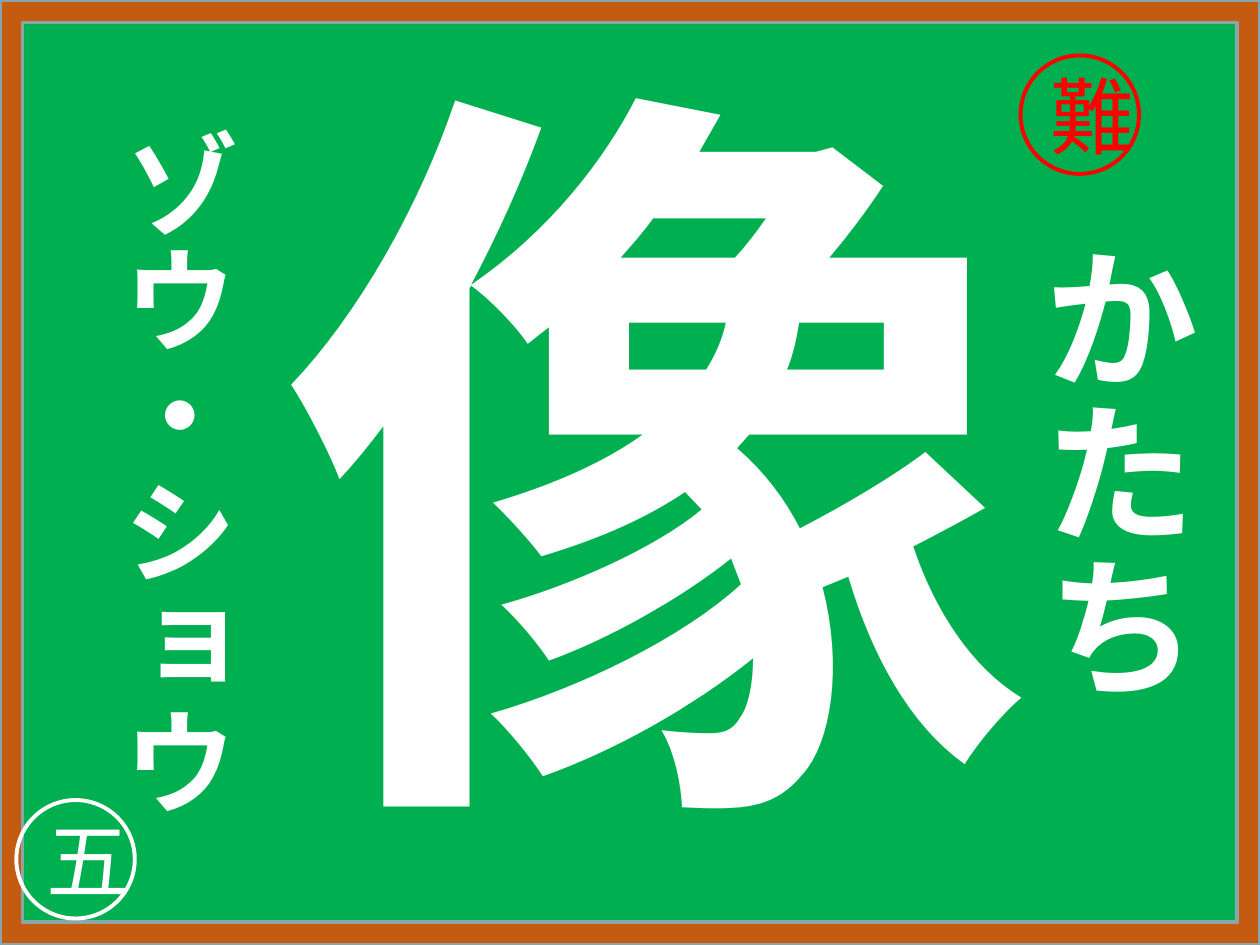
from lxml import etree
from pptx import Presentation
from pptx.dml.color import RGBColor
from pptx.enum.shapes import MSO_SHAPE as Shape
from pptx.enum.text import MSO_ANCHOR as Anchor, MSO_AUTO_SIZE as AutoSize, PP_ALIGN as Align
from pptx.oxml.ns import qn
from pptx.util import Inches, Pt

FONT = "Noto Sans CJK JP"
GREEN = RGBColor(0x00, 0xB0, 0x50)
BROWN = RGBColor(0xC5, 0x5A, 0x11)
GREY = RGBColor(0x8A, 0xA6, 0xA8)
WHITE = RGBColor(0xFF, 0xFF, 0xFF)
RED = RGBColor(0xFF, 0x00, 0x00)


def write(frame, text, size, color, bold=False):
    """Add one centred run, with the font set for Japanese text too."""
    paragraph = frame.paragraphs[0]
    paragraph.alignment = Align.CENTER
    run = paragraph.add_run()
    run.text = text
    run.font.name = FONT
    run.font.size = Pt(size)
    run.font.bold = bold
    run.font.color.rgb = color
    east_asian = etree.SubElement(run.font._element, qn("a:ea"))
    east_asian.set("typeface", FONT)


def set_vertical(shape):
    shape.element.txBody.bodyPr.set("vert", "eaVert")


prs = Presentation()
prs.slide_width = Inches(10)
prs.slide_height = Inches(7.5)
slide = prs.slides.add_slide(prs.slide_layouts[5])
slide.background.fill.solid()
slide.background.fill.fore_color.rgb = GREEN

# Blackboard border, behind everything else
border = slide.shapes.add_shape(Shape.FRAME, 0, 0, prs.slide_width, prs.slide_height)
border.adjustments[0] = 0.024
border.shadow.inherit = False
border.fill.solid()
border.fill.fore_color.rgb = BROWN
border.line.color.rgb = GREY
border.line.width = Pt(2)
slide.shapes.element.insert(2, border.element)

# The kanji
kanji = slide.shapes.title
kanji.left, kanji.top = Inches(1.81), Inches(0.55)
kanji.width, kanji.height = Inches(6.38), Inches(6.27)
kanji.text_frame.vertical_anchor = Anchor.MIDDLE
kanji.text_frame.auto_size = AutoSize.NONE
set_vertical(kanji)
write(kanji.text_frame, "像", 432, WHITE, bold=True)

# Kun reading on the right, on readings on the left
readings = [
    ("かたち", 88, 7.96, 1.82, 1.68, 3.74),
    ("ゾウ・ショウ", 66, 0.69, 0.91, 1.31, 5.55),
]
for text, size, *box in readings:
    reading = slide.shapes.add_textbox(*map(Inches, box))
    reading.text_frame.word_wrap = False
    reading.text_frame.auto_size = AutoSize.SHAPE_TO_FIT_TEXT
    set_vertical(reading)
    write(reading.text_frame, text, size, WHITE, bold=True)

# Circled marks: school grade and difficulty
for text, color, left, top in [("五", WHITE, 0.13, 6.35), ("難", RED, 8.1, 0.44)]:
    mark = slide.shapes.add_shape(
        Shape.OVAL, Inches(left), Inches(top), Inches(0.94), Inches(0.94))
    mark.shadow.inherit = False
    mark.fill.background()
    mark.line.color.rgb = color
    mark.line.width = Pt(2.25)
    mark.text_frame.vertical_anchor = Anchor.MIDDLE
    write(mark.text_frame, text, 48, color)

prs.save("out.pptx")
